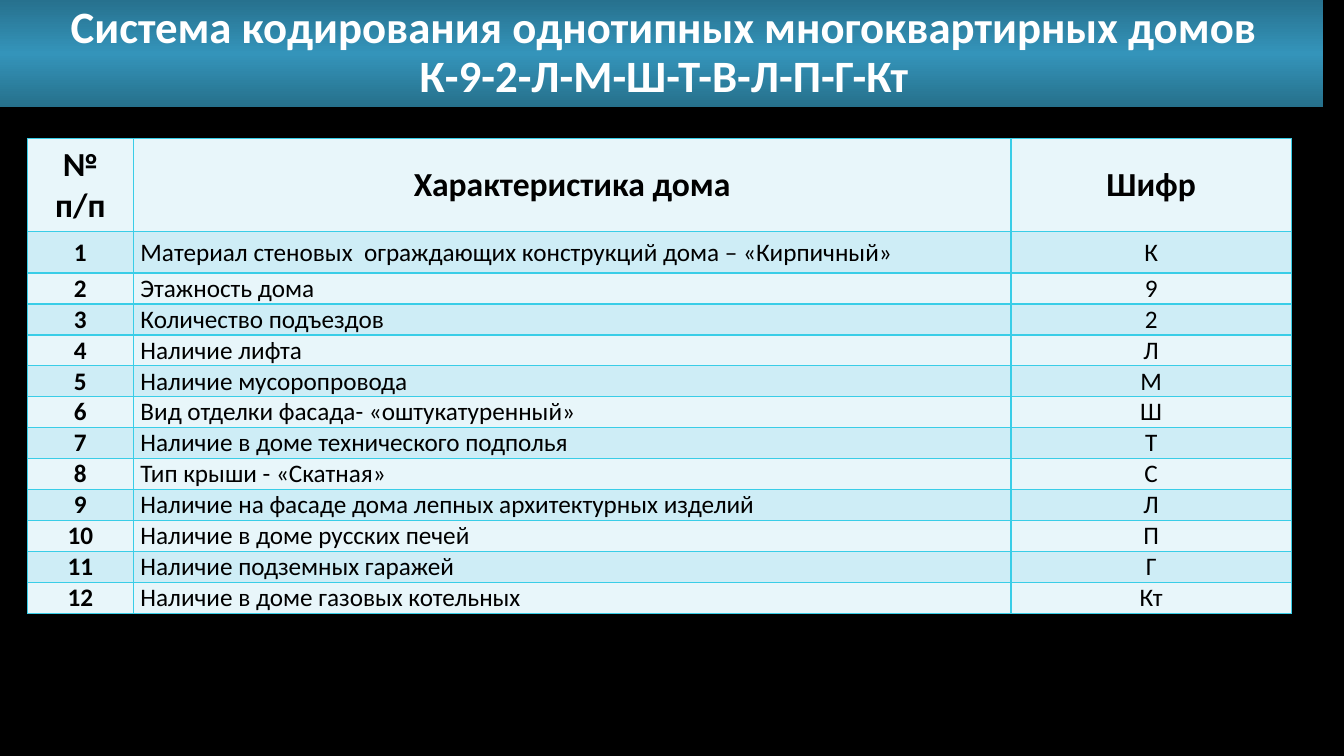
import copy
import pptx
import pptx.dml.color
import pptx.enum.shapes
import pptx.enum.text
import pptx.oxml
import pptx.oxml.ns
import pptx.util

Cm = pptx.util.Cm
Pt = pptx.util.Pt
RGBColor = pptx.dml.color.RGBColor
Align = pptx.enum.text.PP_ALIGN
Anchor = pptx.enum.text.MSO_ANCHOR

TITLE = "Система кодирования однотипных многоквартирных домов\vК-9-2-Л-М-Ш-Т-В-Л-П-Г-Кт"
HEAD = ("№ п/п", "Характеристика дома", "Шифр")
TRAITS = [
    ("Материал стеновых  ограждающих конструкций дома – «Кирпичный»", "К"),
    ("Этажность дома", "9"),
    ("Количество подъездов", "2"),
    ("Наличие лифта", "Л"),
    ("Наличие мусоропровода", "М"),
    ("Вид отделки фасада- «оштукатуренный»", "Ш"),
    ("Наличие в доме технического подполья", "Т"),
    ("Тип крыши - «Скатная»", "С"),
    ("Наличие на фасаде дома лепных архитектурных изделий", "Л"),
    ("Наличие в доме русских печей", "П"),
    ("Наличие подземных гаражей", "Г"),
    ("Наличие в доме газовых котельных", "Кт"),
]

BLACK = RGBColor(0x00, 0x00, 0x00)
WHITE = RGBColor(0xFF, 0xFF, 0xFF)
PALE = RGBColor(0xE8, 0xF6, 0xFA)
SKY = RGBColor(0xCE, 0xED, 0xF6)
CYAN = RGBColor(0x39, 0xCD, 0xE7)
STOPS = [
    (0, RGBColor(0x27, 0x71, 0x8E)),
    (0.5, RGBColor(0x34, 0x94, 0xBA)),
    (1, RGBColor(0x26, 0x70, 0x8B)),
]

WIDTHS = (2.67, 22.12, 7.06)
TALL = [2.34, 1.04] + [0.78] * (len(TRAITS) - 1)


def apply(item, style):
    for name, value in style.items():
        setattr(item, name, value)


def write(frame, text, size, color, bold, align):
    frame.text = text
    para = frame.paragraphs[0]
    para.alignment = align
    style = {"name": "Calibri", "size": Pt(size), "bold": bold}
    for run in para.runs:
        apply(run.font, style)
        run.font.color.rgb = color
    return para


def edge(cell):
    props = cell._tc.get_or_add_tcPr()
    for side in "LRTB":
        props.append(pptx.oxml.parse_xml(
            f'<a:ln{side} {pptx.oxml.ns.nsdecls("a")} w="{Pt(1)}"><a:solidFill>'
            f'<a:srgbClr val="{CYAN}"/></a:solidFill></a:ln{side}>'))


def banner(slide):
    shape = slide.shapes.add_shape(
        pptx.enum.shapes.MSO_SHAPE.RECTANGLE, 0, 0, Cm(33.35), Cm(2.7))
    shape.shadow.inherit = False
    shape.line.fill.background()
    shape.fill.gradient()
    shape.fill.gradient_angle = 270
    first = shape.fill.gradient_stops[0]._gs
    first.addnext(copy.deepcopy(first))
    for stop, (place, color) in zip(shape.fill.gradient_stops, STOPS):
        stop.position = place
        stop.color.rgb = color
    frame = shape.text_frame
    apply(frame, {"word_wrap": True, "vertical_anchor": Anchor.MIDDLE,
                  "margin_left": Cm(0.38), "margin_top": 0, "margin_bottom": 0})
    para = write(frame, TITLE, 32, WHITE, True, Align.CENTER)
    para.line_spacing = 0.9


def grid(slide):
    rows = [HEAD] + [(str(num), *trait) for num, trait in enumerate(TRAITS, 1)]
    table = slide.shapes.add_table(
        len(rows), len(HEAD), Cm(0.69), Cm(3.5),
        Cm(sum(WIDTHS)), Cm(sum(TALL))).table
    apply(table, {"first_row": False, "horz_banding": False})
    for col, width in zip(table.columns, WIDTHS):
        col.width = Cm(width)
    for row, height in zip(table.rows, TALL):
        row.height = Cm(height)
    look = {"margin_left": Cm(0.18), "margin_right": Cm(0.18),
            "margin_top": 0, "margin_bottom": 0,
            "vertical_anchor": Anchor.MIDDLE}
    for r, texts in enumerate(rows):
        for c, text in enumerate(texts):
            cell = table.cell(r, c)
            apply(cell, look)
            edge(cell)
            cell.fill.solid()
            cell.fill.fore_color.rgb = SKY if r % 2 else PALE
            write(cell.text_frame, text, 18 if r else 24, BLACK,
                  r == 0 or c == 0,
                  Align.LEFT if r and c == 1 else Align.CENTER)


def main():
    deck = pptx.Presentation()
    apply(deck, {"slide_width": Cm(33.87), "slide_height": Cm(19.05)})
    slide = deck.slides.add_slide(deck.slide_layouts[6])
    slide.background.fill.solid()
    slide.background.fill.fore_color.rgb = BLACK
    banner(slide)
    grid(slide)
    deck.save("out.pptx")


if __name__ == "__main__":
    main()
